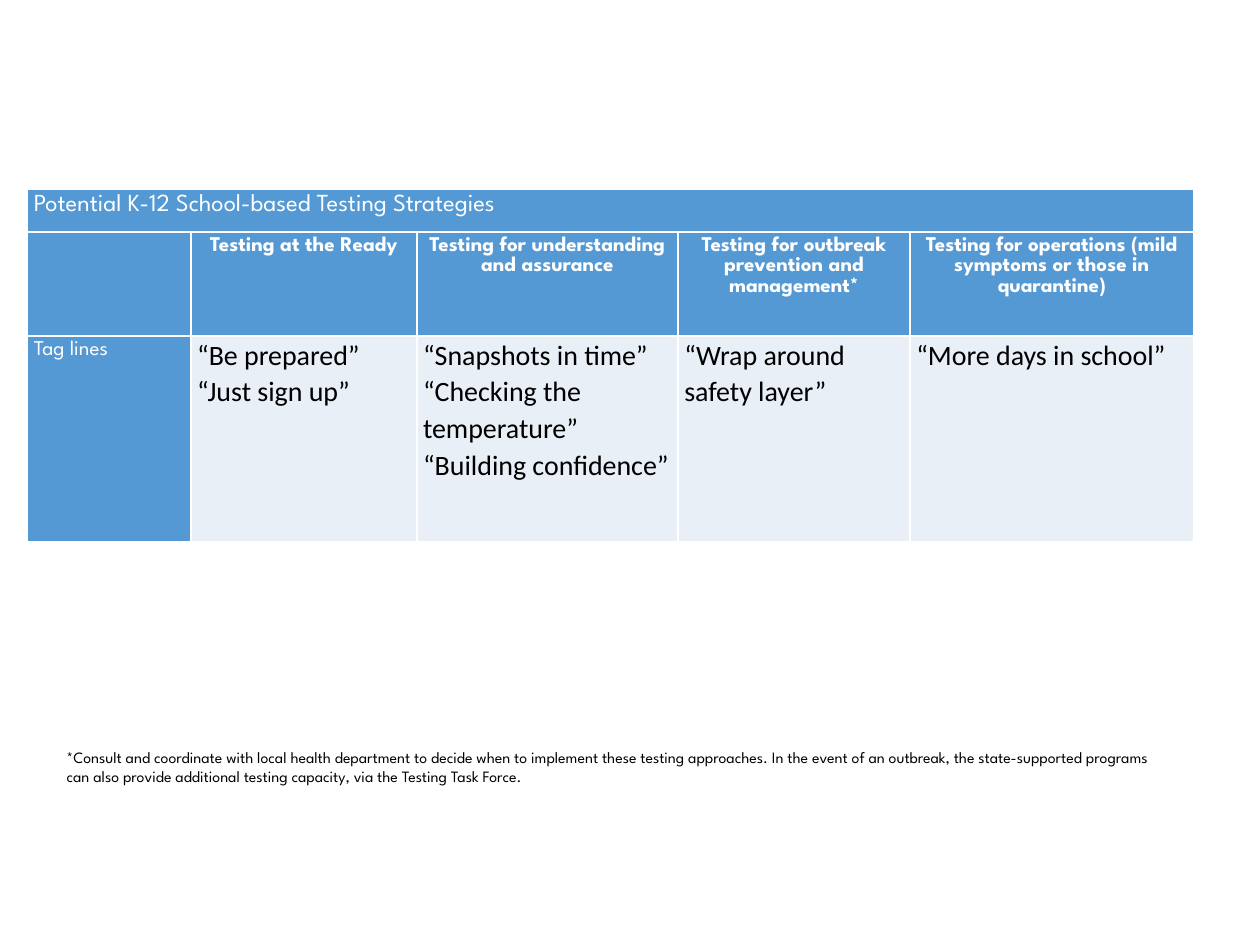
"""Build a slide with a table of school-based testing strategies and a footnote."""
from lxml.etree import SubElement
from pptx import Presentation
from pptx.dml.color import RGBColor
from pptx.enum.text import MSO_AUTO_SIZE, PP_ALIGN
from pptx.oxml.ns import qn
from pptx.util import Pt

WHITE = RGBColor(0xFF, 0xFF, 0xFF)
BLACK = RGBColor(0, 0, 0)
BLUE = RGBColor(0x54, 0x99, 0xD3)
PALE_BLUE = RGBColor(0xE9, 0xEF, 0xF7)
HEADING_FONT, BODY_FONT = "League Spartan", "Calibri"

ROWS = [
    [["Potential K-12 School-based Testing Strategies"], [], [], [], []],
    [
        [],
        ["Testing at the Ready"],
        ["Testing for understanding and assurance"],
        ["Testing for outbreak prevention and management*"],
        ["Testing for operations (mild symptoms or those in quarantine)"],
    ],
    [
        ["Tag lines"],
        ["“Be prepared”", "“Just sign up”"],
        ["“Snapshots in time”", "“Checking the temperature”", "“Building confidence”"],
        ["“Wrap around safety layer”"],
        ["“More days in school”"],
    ],
]
FOOTNOTE = (
    "*Consult and coordinate with local health department to decide when to implement "
    "these testing approaches. In the event of an outbreak, the state-supported programs "
    "can also provide additional testing capacity, via the Testing Task Force."
)
COLUMN_WIDTHS = [93.4, 129.1, 149.3, 132.6, 162]
ROW_HEIGHTS = [24.5, 59.6, 117.4]
BORDER_WIDTH = 1
HEADING_TOP_MARGIN = 2


def set_borders(cell):
    properties = cell._tc.get_or_add_tcPr()
    for position, tag in enumerate(("a:lnL", "a:lnR", "a:lnT", "a:lnB")):
        border = SubElement(properties, qn(tag), w=str(Pt(BORDER_WIDTH)))
        fill = SubElement(border, qn("a:solidFill"))
        SubElement(fill, qn("a:srgbClr"), val=str(WHITE))
        properties.insert(position, border)


def style_paragraph(paragraph, font_name, size, color, bold=False):
    paragraph.font.name = font_name
    paragraph.font.size = Pt(size)
    paragraph.font.color.rgb = color
    paragraph.font.bold = bold


def fill_cell(cell, lines, row, column):
    is_tag_line = row == 2 and column > 0
    is_strategy = row == 1
    cell.margin_left = cell.margin_right = Pt(3.6)
    cell.margin_top = Pt(0 if is_tag_line else HEADING_TOP_MARGIN)
    cell.margin_bottom = 0
    cell.fill.solid()
    cell.fill.fore_color.rgb = PALE_BLUE if is_tag_line else BLUE
    set_borders(cell)
    if not lines:
        return
    cell.text = "\n".join(lines)
    for paragraph in cell.text_frame.paragraphs:
        paragraph.line_spacing = 1.07
        paragraph.alignment = PP_ALIGN.CENTER if is_strategy else PP_ALIGN.LEFT
        if is_tag_line:
            style_paragraph(paragraph, BODY_FONT, 16, BLACK)
        else:
            style_paragraph(paragraph, HEADING_FONT, 14 if row == 0 else 12, WHITE, is_strategy)


def add_strategies(slide):
    strategies = slide.shapes.add_table(
        len(ROW_HEIGHTS), len(COLUMN_WIDTHS), Pt(15.7), Pt(108),
        Pt(sum(COLUMN_WIDTHS)), Pt(sum(ROW_HEIGHTS)),
    ).table
    for column, width in zip(strategies.columns, COLUMN_WIDTHS):
        column.width = Pt(width)
    for row, height in zip(strategies.rows, ROW_HEIGHTS):
        row.height = Pt(height)
    strategies.cell(0, 0).merge(strategies.cell(0, len(COLUMN_WIDTHS) - 1))
    for row, cells in enumerate(ROWS):
        for column, lines in enumerate(cells):
            fill_cell(strategies.cell(row, column), lines, row, column)


def add_footnote(slide):
    footnote = slide.shapes.add_textbox(Pt(31), Pt(424), Pt(644.4), Pt(45.4)).text_frame
    footnote.word_wrap = True
    footnote.auto_size = MSO_AUTO_SIZE.SHAPE_TO_FIT_TEXT
    footnote.text = FOOTNOTE
    style_paragraph(footnote.paragraphs[0], HEADING_FONT, 9, BLACK)


def main():
    presentation = Presentation()
    presentation.slide_width, presentation.slide_height = Pt(720), Pt(540)
    slide = presentation.slides.add_slide(presentation.slide_layouts[6])
    add_strategies(slide)
    add_footnote(slide)
    presentation.save("out.pptx")


if __name__ == "__main__":
    main()
